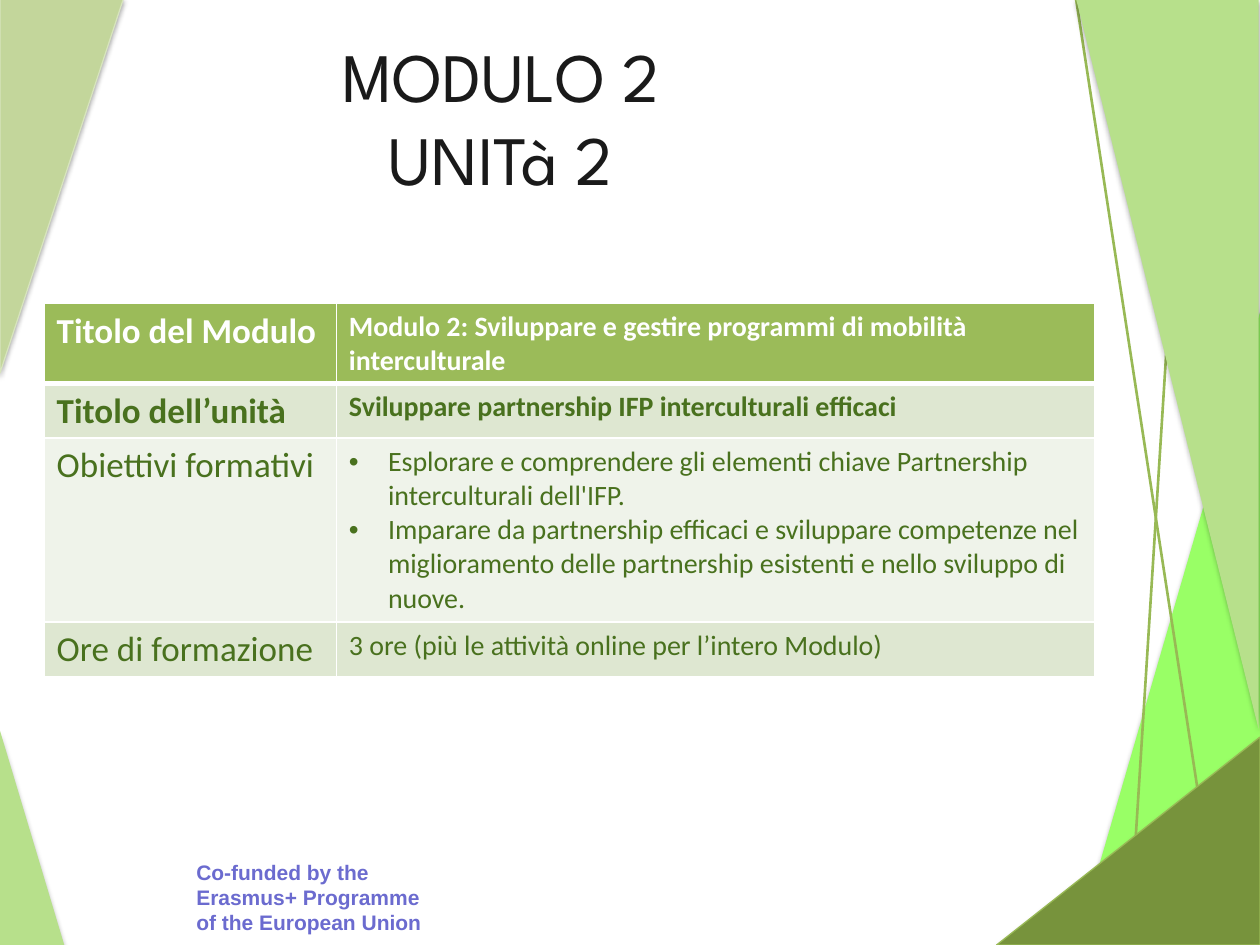
from dataclasses import dataclass

from lxml.etree import SubElement
from pptx import Presentation
from pptx.dml.color import RGBColor
from pptx.enum.shapes import MSO_CONNECTOR, MSO_SHAPE
from pptx.enum.text import MSO_ANCHOR, MSO_AUTO_SIZE, PP_ALIGN
from pptx.oxml.ns import qn
from pptx.util import Inches, Pt

WHITE = "FFFFFF"
GREEN = "49711E"
LEAF = "98B955"


@dataclass
class Wedge:
    """Right triangle; its square corner is bottom left until flipped."""
    box: tuple
    fill: str
    flip: str = ""
    line: str = ""
    alpha: int = 35
    drop: float = 1.8


@dataclass
class Row:
    head: str
    body: list
    fill: str
    high: float
    ink: str = GREEN
    bold: bool = False
    list: bool = False
    base: float = 1


WEDGES = [
    Wedge((8.54, 2.41, 1.48, 5.09), "99FF66", "H", alpha=38, drop=1.6),
    Wedge((0, 5.8, 0.51, 1.7), "B7E08B"),
    Wedge((0, -0.01, 0.98, 2.97), "C3D69B", "V", "D7E4BD"),
]
LINES = [(8.96, 7.5, 9.3, 2.1), (9.65, 7.21, 8.54, -0.01)]
FRONT = [
    Wedge((8.54, -0.01, 1.45, 5.8), "B7E08B", "HV"),
    Wedge((7.91, 5.85, 2.09, 1.65), "77933C", "H", LEAF),
]
ROWS = [
    Row("Titolo del Modulo",
        ["Modulo 2: Sviluppare e gestire programmi di mobilità interculturale"],
        "9BBB59", 0.63, ink=WHITE, bold=True, base=3),
    Row("Titolo dell’unità",
        ["Sviluppare partnership IFP interculturali efficaci"],
        "DEE7D1", 0.43, bold=True),
    Row("Obiettivi formativi",
        ["Esplorare e comprendere gli elementi chiave Partnership "
         "interculturali dell'IFP.",
         "Imparare da partnership efficaci e sviluppare competenze nel "
         "miglioramento delle partnership esistenti e nello sviluppo di nuove."],
        "EFF3EA", 1.46, list=True),
    Row("Ore di formazione",
        ["3 ore (più le attività online per l’intero Modulo)"],
        "DEE7D1", 0.43),
]


def color(code: str) -> RGBColor:
    return RGBColor.from_string(code)


def write(frame, *texts: str, size: float, ink: str, font: str = "Calibri",
          bold: bool = False, align=None, bullet: bool = False) -> None:
    frame.word_wrap = True
    for i, text in enumerate(texts):
        para = frame.paragraphs[0] if i == 0 else frame.add_paragraph()
        para.text = text
        if align is not None:
            para.alignment = align
        if bullet:
            props = para._p.get_or_add_pPr()
            props.set("marL", str(Inches(0.31)))
            props.set("indent", str(-Inches(0.31)))
            SubElement(props, qn("a:buFont"), typeface="Arial")
            SubElement(props, qn("a:buChar"), char="•")
        for run in para.runs:
            run.font.name = font
            run.font.size = Pt(size)
            run.font.bold = bold
            run.font.color.rgb = color(ink)


def wedge(slide, item: Wedge) -> None:
    shape = slide.shapes.add_shape(MSO_SHAPE.RIGHT_TRIANGLE,
                                   *map(Inches, item.box))
    shape.fill.solid()
    shape.fill.fore_color.rgb = color(item.fill)
    if item.line:
        shape.line.color.rgb = color(item.line)
        shape.line.width = Pt(0.75)
    else:
        shape.line.fill.background()
    props = shape._element.spPr
    for axis in item.flip:
        props.find(qn("a:xfrm")).set("flip" + axis, "1")
    # Soft shadow straight below
    shape.shadow.inherit = False
    shade = SubElement(props.find(qn("a:effectLst")), qn("a:outerShdw"),
                       blurRad=str(Pt(3.1)), dist=str(Pt(item.drop)),
                       dir="5400000", rotWithShape="0")
    tint = SubElement(shade, qn("a:srgbClr"), val="000000")
    SubElement(tint, qn("a:alpha"), val=str(item.alpha * 1000))


def stroke(slide, ends: tuple) -> None:
    line = slide.shapes.add_connector(MSO_CONNECTOR.STRAIGHT,
                                      *map(Inches, ends))
    line.line.color.rgb = color(LEAF)
    line.line.width = Pt(1.5)
    SubElement(line._element.spPr, qn("a:effectLst"))


def paint(cell, fill: str, top: float, base: float) -> None:
    props = cell._tc.get_or_add_tcPr()
    for side, width in zip("LRTB", (1, 1, top, base)):
        edge = SubElement(props, qn("a:ln" + side), w=str(Pt(width)))
        solid = SubElement(edge, qn("a:solidFill"))
        SubElement(solid, qn("a:srgbClr"), val=WHITE)
    cell.fill.solid()
    cell.fill.fore_color.rgb = color(fill)


def grid(slide, rows: list) -> None:
    wide = (2.32, 6.02)
    high = sum(row.high for row in rows)
    table = slide.shapes.add_table(
        len(rows), 2, Inches(0.35), Inches(2.41),
        Inches(sum(wide)), Inches(high)).table
    for col, width in zip(table.columns, wide):
        col.width = Inches(width)
    top = 1
    for i, row in enumerate(rows):
        table.rows[i].height = Inches(row.high)
        left, right = table.cell(i, 0), table.cell(i, 1)
        write(left.text_frame, row.head, size=20, ink=row.ink, bold=row.bold)
        write(right.text_frame, *row.body, size=16, ink=row.ink,
              bold=row.bold, bullet=row.list)
        for cell in (left, right):
            paint(cell, row.fill, top, row.base)
        top = row.base


def main() -> None:
    deck = Presentation()
    deck.slide_width, deck.slide_height = Inches(10), Inches(7.5)
    slide = deck.slides.add_slide(deck.slide_layouts[5])

    # Side decoration
    for item in WEDGES:
        wedge(slide, item)
    for ends in LINES:
        stroke(slide, ends)
    for item in FRONT:
        wedge(slide, item)

    # Funding note
    note = slide.shapes.add_textbox(*map(Inches, (1.46, 6.77, 2, 0.71)))
    write(note.text_frame,
          "Co-funded by the Erasmus+ Programme of the European Union",
          size=12, ink="6B6BCF", font="Arial", bold=True)

    # Title
    title = slide.shapes.title
    title.left, title.top, title.width, title.height = map(
        Inches, (0.74, 0.3, 6.47, 1.25))
    title.text_frame.auto_size = MSO_AUTO_SIZE.NONE
    title.text_frame.vertical_anchor = MSO_ANCHOR.MIDDLE
    write(title.text_frame, "MODULO 2\vUNITà 2", size=39.6, ink="1A1A1A",
          font="League Spartan", align=PP_ALIGN.CENTER)

    # Unit table
    grid(slide, ROWS)
    deck.save("out.pptx")


if __name__ == "__main__":
    main()
